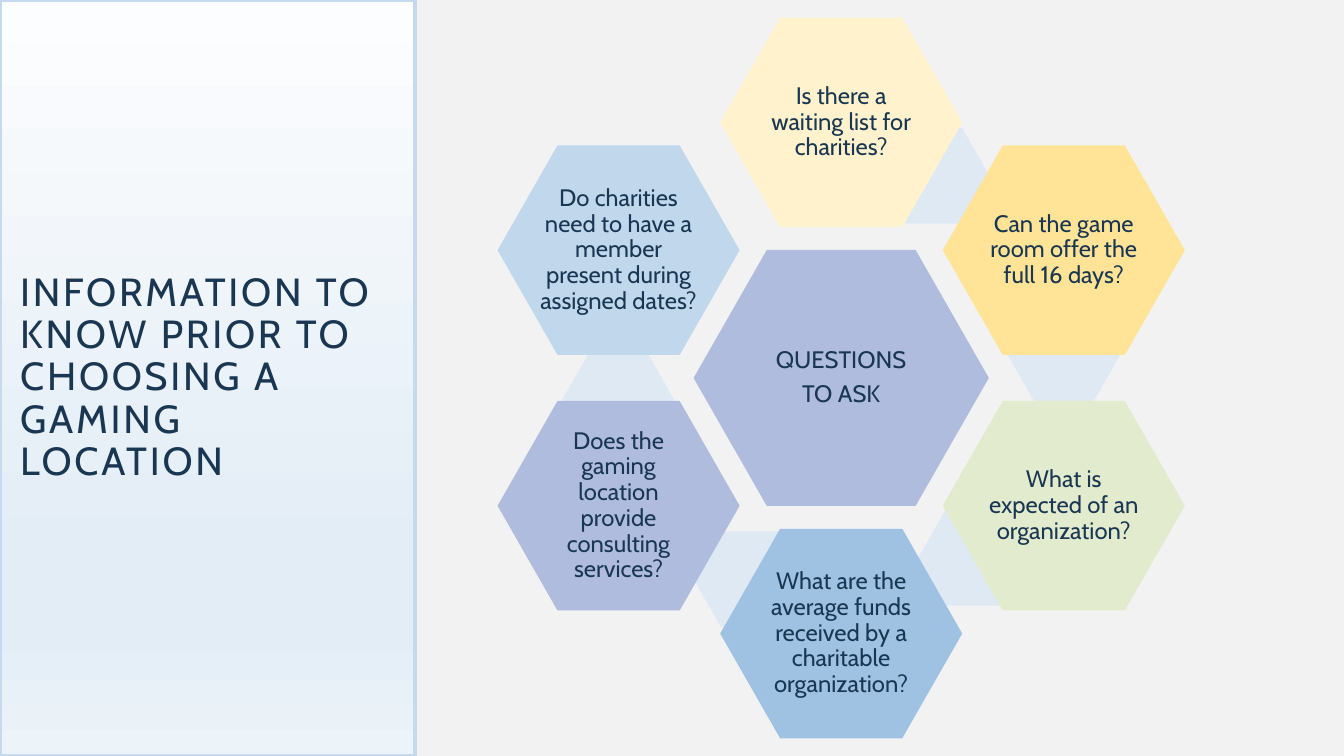
from lxml.etree import SubElement
from pptx import Presentation
from pptx.dml.color import RGBColor
from pptx.enum.shapes import MSO_SHAPE
from pptx.enum.text import MSO_ANCHOR, PP_ALIGN
from pptx.oxml.ns import qn
from pptx.util import Cm, Pt

COLORS = {
    "background": "F2F2F2",
    "ink": "193752",
    "panel_border": "C5DAEE",
    "link": "DFE9F4",
    "lavender": "B0BCDD",
    "cream": "FFF2CC",
    "amber": "FFE497",
    "sage": "E2EBCD",
    "blue": "9FC2E2",
    "sky": "C0D7EC",
}
PANEL_GRADIENT = [(0, "FCFDFE"), (74, "E3EDF6"), (83, "E3EDF6"), (100, "ECF3F9")]
FONT = "Cabin"
TITLE = "INFORMATION TO KNOW PRIOR TO CHOOSING A GAMING LOCATION"

COLUMN_STEP, ROW_STEP = 5.61, 3.22
QUESTIONS = [
    ("Is there a waiting list for charities?", "cream", 0, -2),
    ("Can the game room offer the full 16 days?", "amber", 1, -1),
    ("What is expected of an organization?", "sage", 1, 1),
    ("What are the average funds received by a charitable organization?", "blue", 0, 2),
    ("Does the gaming location provide consulting services?", "lavender", -1, 1),
    ("Do charities need to have a member present during assigned dates?", "sky", -1, -1),
]
LINK_OFFSETS = [(2.33, -5.09), (5.61, -0.57), (3.35, 4.53), (-2.31, 5.07), (-5.62, 0.55)]
HUB_SIZE = (7.44, 6.45)
QUESTION_SIZE = (6.1, 5.28)
LINK_SIZE = (2.82, 2.41)


def color(name):
    return RGBColor.from_string(COLORS[name])


def write(shape, lines, size, align, inset):
    frame = shape.text_frame
    frame.word_wrap = True
    frame.vertical_anchor = MSO_ANCHOR.MIDDLE
    frame.margin_left = frame.margin_right = Cm(inset)
    frame.margin_top = frame.margin_bottom = Cm(inset)
    frame.text = "\n".join(lines)
    for paragraph in frame.paragraphs:
        paragraph.alignment = align
        paragraph.line_spacing = 0.9
        paragraph.font.name = FONT
        paragraph.font.size = Pt(size)
        paragraph.font.color.rgb = color("ink")


def add_title_panel(slide, left, top, width, height):
    panel = slide.shapes.add_shape(
        MSO_SHAPE.RECTANGLE, Cm(left), Cm(top), Cm(width), Cm(height))
    panel.shadow.inherit = False
    panel.line.color.rgb = color("panel_border")
    panel.line.width = Pt(2.5)
    panel.fill.gradient()
    panel.fill.gradient_angle = 270
    stops = panel._element.spPr.find(qn("a:gradFill")).find(qn("a:gsLst"))
    for stop in list(stops):
        stops.remove(stop)
    for percent, tint in PANEL_GRADIENT:
        stop = SubElement(stops, qn("a:gs"), pos=str(percent * 1000))
        SubElement(stop, qn("a:srgbClr"), val=tint)
    write(panel, [TITLE], 28, PP_ALIGN.LEFT, 0.51)
    for run in panel.text_frame.paragraphs[0].runs:
        run._r.get_or_add_rPr().set("spc", "200")


def add_hexagon(slide, center_x, center_y, size, fill, lines=()):
    width, height = size
    hexagon = slide.shapes.add_shape(
        MSO_SHAPE.HEXAGON, Cm(center_x - width / 2), Cm(center_y - height / 2),
        Cm(width), Cm(height))
    hexagon.adjustments[0] = 0.286
    hexagon.shadow.inherit = False
    hexagon.fill.solid()
    hexagon.fill.fore_color.rgb = color(fill)
    hexagon.line.fill.background()
    if lines:
        write(hexagon, lines, 17, PP_ALIGN.CENTER, 0.05)
    return hexagon


def add_question_ring(slide, left, top, width, height):
    center_x, center_y = left + width / 2, top + height / 2
    hub = add_hexagon(
        slide, center_x, center_y, HUB_SIZE, "lavender", ["QUESTIONS", "TO ASK"])
    for paragraph in hub.text_frame.paragraphs:
        paragraph.space_after = Pt(6)
    for dx, dy in LINK_OFFSETS:
        add_hexagon(slide, center_x + dx, center_y + dy, LINK_SIZE, "link")
    for question, fill, column, row in QUESTIONS:
        add_hexagon(
            slide, center_x + column * COLUMN_STEP, center_y + row * ROW_STEP,
            QUESTION_SIZE, fill, [question])


def main():
    presentation = Presentation()
    presentation.slide_width = Cm(33.87)
    presentation.slide_height = Cm(19.05)
    slide = presentation.slides.add_slide(presentation.slide_layouts[6])
    slide.background.fill.solid()
    slide.background.fill.fore_color.rgb = color("background")
    add_title_panel(slide, 0, 0, 10.46, 19.05)
    add_question_ring(slide, 12.54, 0.43, 17.32, 18.19)
    presentation.save("out.pptx")


if __name__ == "__main__":
    main()
